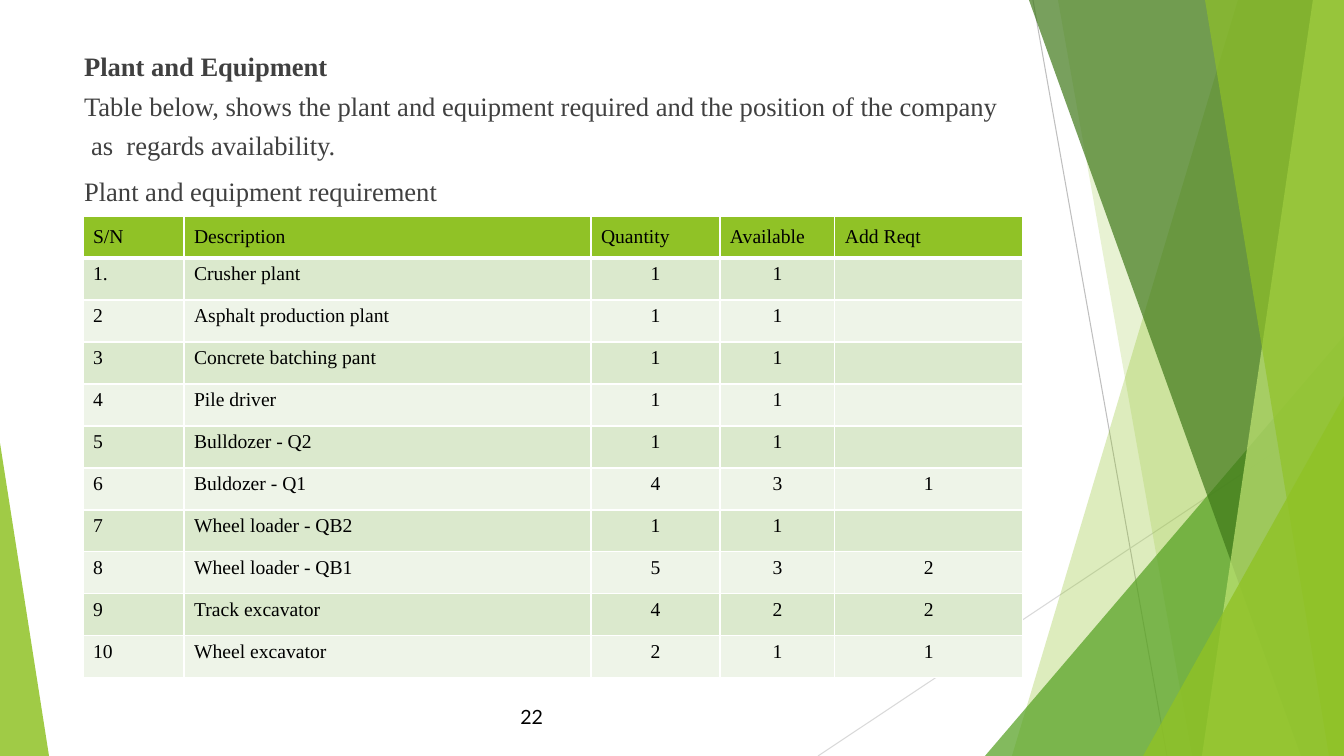
from lxml.etree import SubElement as Sub
from pptx import Presentation
from pptx.dml.color import RGBColor
from pptx.enum.shapes import MSO_CONNECTOR as Link, MSO_SHAPE as Shape
from pptx.enum.text import MSO_ANCHOR as Anchor, MSO_AUTO_SIZE as Auto, PP_ALIGN as Align
from pptx.oxml.ns import qn
from pptx.util import Pt

WIDE, HIGH = 1344, 756
UNIT = 12192000 / WIDE

BLACK = RGBColor(0, 0, 0)
WHITE = RGBColor(0xFF, 0xFF, 0xFF)
DARK = RGBColor(0x40, 0x40, 0x40)
SILVER = RGBColor(0xBF, 0xBF, 0xBF)
PALE = RGBColor(0xD9, 0xD9, 0xD9)
LIME = RGBColor(0x90, 0xC2, 0x26)
GREEN = RGBColor(0x54, 0xA0, 0x21)
FOREST = RGBColor(0x3F, 0x78, 0x19)
MINT = RGBColor(0xC0, 0xE4, 0x74)
BANDS = RGBColor(0xEE, 0xF4, 0xE8), RGBColor(0xDB, 0xE9, 0xCD)

SERIF = "Times New Roman"

# Line ends and colour
RULES = [((1033, 0), (1167, HIGH), SILVER), ((WIDE, 406), (818, HIGH), PALE)]

# Facets run to the right edge: x at the top, x at the bottom.
# Triangles: left, top, width, place of the tip (0 left, 1 right).
FACETS = [
    ((1238, 1012), LIME, 30),
    ((1058, 1192), LIME, 20),
    ((985, 336, 359, 1), GREEN, 72),
    ((1029, 1301), FOREST, 70),
    ((1313, 1202), MINT, 70),
    ((1205, 1329), LIME, 65),
    ((1143, 396, 201, 1), LIME, 80),
    ((0, 443, 49, 0), LIME, 85),
]

# Text, indent, line spacing, bold
INTRO = [
    ("Plant and Equipment", 20, 1.0, True),
    ("Table below, shows the plant and equipment required and the position of the company",
     20, 0.8, False),
    ("as  regards availability.", 27, 0.8, False),
    ("Plant and equipment requirement", 20, 1.0, False),
]

COLS = [101, 407, 129, 115, 188]
ROWS = [
    ("S/N", "Description", "Quantity", "Available", "Add Reqt"),
    ("1.", "Crusher plant", "1", "1", ""),
    ("2", "Asphalt production plant", "1", "1", ""),
    ("3", "Concrete batching pant", "1", "1", ""),
    ("4", "Pile driver", "1", "1", ""),
    ("5", "Bulldozer - Q2", "1", "1", ""),
    ("6", "Buldozer - Q1", "4", "3", "1"),
    ("7", "Wheel loader - QB2", "1", "1", ""),
    ("8", "Wheel loader - QB1", "5", "3", "2"),
    ("9", "Track excavator", "4", "2", "2"),
    ("10", "Wheel excavator", "2", "1", "1"),
]


def px(*sizes):
    return [round(size * UNIT) for size in sizes]


def assign(item, **values):
    for name, value in values.items():
        setattr(item, name, value)


def write(para, text, size, face, color, bold=False):
    run = para.add_run()
    run.text = text
    assign(run.font, size=Pt(size), name=face, bold=bold)
    run.font.color.rgb = color


def draw_rule(shapes, start, end, color):
    rule = shapes.add_connector(Link.STRAIGHT, *px(*start, *end))
    rule.line.color.rgb = color
    rule.line.width = Pt(0.75)
    Sub(rule._element.spPr, qn("a:effectLst"))


def draw_facet(shapes, place, color, alpha):
    if len(place) == 2:
        top, base = place
        path = shapes.build_freeform(top, 0, scale=UNIT)
        path.add_line_segments([(WIDE, 0), (WIDE, HIGH), (base, HIGH)])
        facet = path.convert_to_shape()
    else:
        left, top, width, tip = place
        facet = shapes.add_shape(Shape.ISOSCELES_TRIANGLE, *px(left, top, width, HIGH - top))
        facet.adjustments[0] = tip
    facet.shadow.inherit = False
    facet.line.fill.background()
    facet.fill.solid()
    facet.fill.fore_color.rgb = color
    tint = facet._element.spPr.find(".//" + qn("a:srgbClr"))
    Sub(tint, qn("a:alpha"), val=str(alpha * 1000))


def fill_intro(body, box):
    left, top, width, height = px(*box)
    assign(body, left=left, top=top, width=width, height=height)
    frame = body.text_frame
    assign(frame, word_wrap=True, auto_size=Auto.NONE, vertical_anchor=Anchor.TOP)
    for index, (text, indent, space, bold) in enumerate(INTRO):
        para = frame.add_paragraph() if index else frame.paragraphs[0]
        assign(para, line_spacing=space, space_before=Pt(10), alignment=Align.LEFT)
        props = para._p.get_or_add_pPr()
        props.set("marL", str(px(indent)[0]))
        props.set("indent", "0")
        Sub(props, qn("a:buNone"))
        write(para, text, 19, SERIF, DARK, bold)


def edge_cell(cell, row):
    props = cell._tc.get_or_add_tcPr()
    for side in "LRTB":
        thick = (row, side) in ((0, "B"), (1, "T"))
        edge = Sub(props, qn("a:ln" + side), w=str(Pt(3 if thick else 1)))
        Sub(Sub(edge, qn("a:solidFill")), qn("a:srgbClr"), val=str(WHITE))


def draw_table(shapes, box):
    table = shapes.add_table(len(ROWS), len(COLS), *px(*box)).table
    assign(table, first_row=False, horz_banding=False)
    for col, width in zip(table.columns, px(*COLS)):
        col.width = width
    for r, texts in enumerate(ROWS):
        table.rows[r].height = px(box[3] / len(ROWS))[0]
        for c, text in enumerate(texts):
            cell = table.cell(r, c)
            edge_cell(cell, r)
            cell.fill.solid()
            cell.fill.fore_color.rgb = BANDS[r % 2] if r else LIME
            cell.vertical_anchor = Anchor.TOP if r else Anchor.MIDDLE
            para = cell.text_frame.paragraphs[0]
            para.alignment = Align.CENTER if r and c > 1 else Align.LEFT
            if text:
                write(para, text, 14, SERIF, BLACK)


def draw_number(shapes, box):
    frame = shapes.add_textbox(*px(*box)).text_frame
    assign(frame, word_wrap=True, vertical_anchor=Anchor.MIDDLE)
    para = frame.paragraphs[0]
    para.alignment = Align.RIGHT
    write(para, "22", 14, "Lato", BLACK)


def main():
    deck = Presentation()
    width, height = px(WIDE, HIGH)
    assign(deck, slide_width=width, slide_height=height)
    slide = deck.slides.add_slide(deck.slide_layouts[1])
    shapes = slide.shapes
    title = shapes.title._element
    title.getparent().remove(title)
    body = slide.placeholders[1]

    # Backdrop
    for rule in RULES:
        draw_rule(shapes, *rule)
    for facet in FACETS:
        draw_facet(shapes, *facet)

    # Content, in front of the backdrop
    shapes._spTree.append(body._element)
    fill_intro(body, (54, 45, 1082, 621))
    draw_number(shapes, (477, 697, 76, 40))
    draw_table(shapes, (83, 216, sum(COLS), 462))
    deck.save("out.pptx")


if __name__ == "__main__":
    main()
